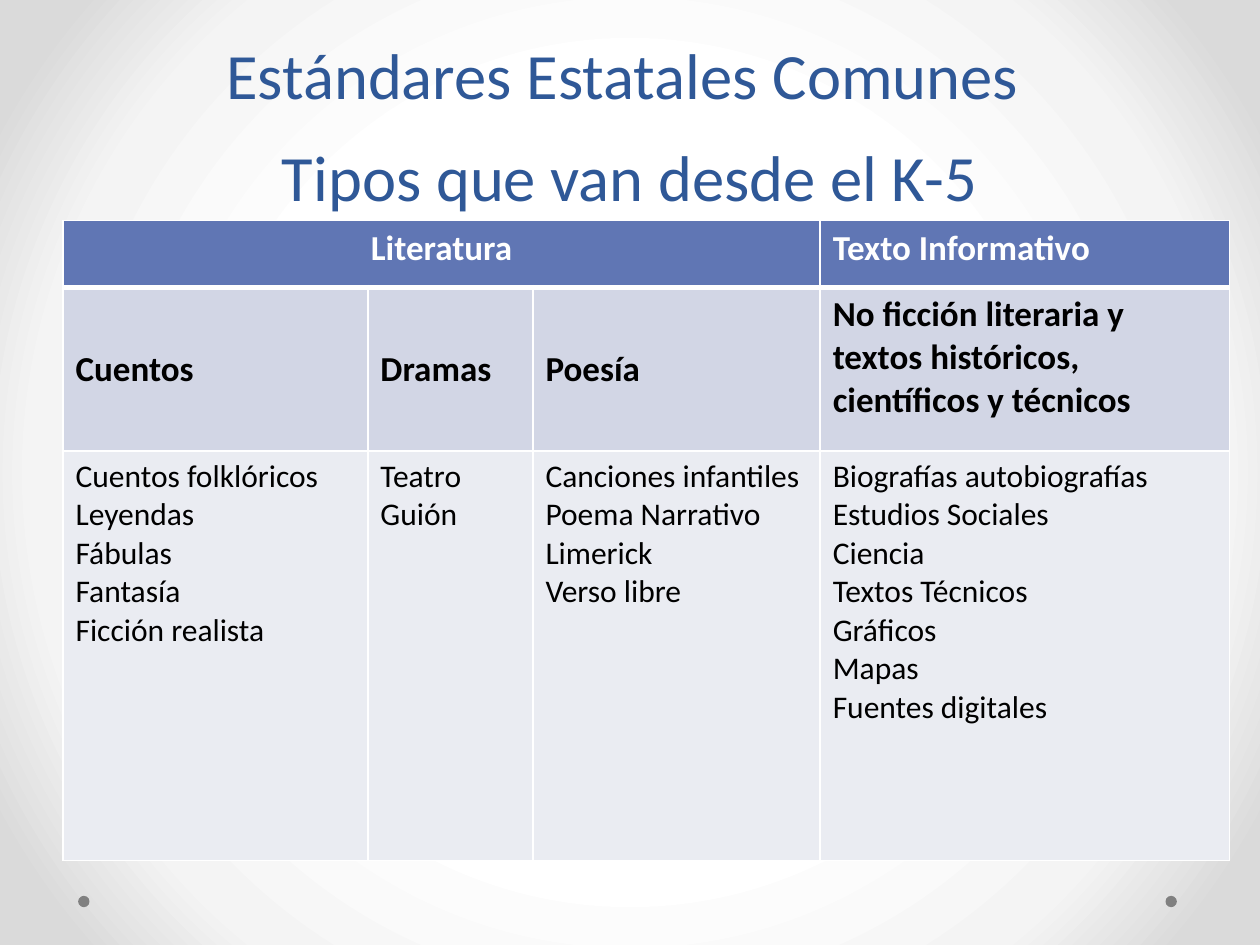
from dataclasses import dataclass

from pptx import Presentation
from pptx import util as u
from pptx.dml.color import RGBColor
from pptx.enum import shapes, text
from pptx.oxml import parse_xml
from pptx.oxml.ns import nsdecls, qn


@dataclass(frozen=True)
class Theme:
    font: str = "Calibri"
    title: str = "2F5897"
    white: str = "FFFFFF"
    black: str = "000000"
    dot: str = "808080"
    row_fills: tuple = ("6076B4", "D2D6E5", "EAECF2")
    backdrop: tuple = ((50, "FFFFFF"), (76, "F4F4F4"), (92, "DADADA"))
    title_size: float = 36.9
    heading_size: int = 20
    body_size: int = 18


theme = Theme()


def style_font(font, size, color, bold=False):
    font.name = theme.font
    font.size = u.Pt(size)
    font.bold = bold
    font.color.rgb = RGBColor.from_string(color)


def set_borders(cell, widths):
    properties = cell._tc.get_or_add_tcPr()
    for index, (side, width) in enumerate(zip("LRTB", widths)):
        properties.insert(index, parse_xml(
            f'<a:ln{side} {nsdecls("a")} w="{u.Pt(width)}"><a:solidFill>'
            f'<a:srgbClr val="{theme.white}"/></a:solidFill></a:ln{side}>'))


deck = Presentation()
deck.slide_width, deck.slide_height = u.Inches(10), u.Inches(7.5)
page = deck.slides.add_slide(deck.slide_layouts[6])

page.background.fill.gradient()
gradient = page.element.find(".//" + qn("a:gradFill"))
stops = "".join(f'<a:gs pos="{place * 1000}"><a:srgbClr val="{color}"/></a:gs>'
                for place, color in theme.backdrop)
gradient.getparent().replace(gradient, parse_xml(
    f'<a:gradFill {nsdecls("a")} rotWithShape="1"><a:gsLst>{stops}</a:gsLst>'
    '<a:path path="circle"><a:fillToRect l="50000" t="50000" r="50000" b="50000"/>'
    '</a:path></a:gradFill>'))

for left in (9.25, 0.62):
    dot = page.shapes.add_shape(shapes.MSO_SHAPE.OVAL, u.Inches(left), u.Inches(7.11),
                                u.Inches(0.09), u.Inches(0.09))
    dot.shadow.inherit = False
    dot.fill.solid()
    dot.fill.fore_color.rgb = RGBColor.from_string(theme.dot)
    dot.line.fill.background()

title_box = page.shapes.add_textbox(u.Inches(0.5), u.Inches(0.25), u.Inches(9), u.Inches(1.5))
title_box.text_frame.word_wrap = True
title_box.text_frame.vertical_anchor = text.MSO_ANCHOR.BOTTOM
title = title_box.text_frame.paragraphs[0]
title.text = "Estándares Estatales Comunes \vTipos que van desde el K-5"
title.alignment = text.PP_ALIGN.CENTER
title.line_spacing = u.Pt(58)
style_font(title.font, theme.title_size, theme.title)

column_widths = (2.42, 1.31, 2.28, 3.25)
row_heights = (0.53, 1.3, 3.25)
rows = (
    ("Literatura", "", "", "Texto Informativo"),
    ("Cuentos", "Dramas", "Poesía",
     "No ficción literaria y textos históricos, científicos y técnicos"),
    ("Cuentos folklóricos\nLeyendas\nFábulas\nFantasía\nFicción realista",
     "Teatro\nGuión",
     "Canciones infantiles\nPoema Narrativo\nLimerick\nVerso libre",
     "Biografías autobiografías\nEstudios Sociales\nCiencia\nTextos Técnicos\n"
     "Gráficos\nMapas\nFuentes digitales"),
)
row_styles = (
    (theme.heading_size, theme.white, True),
    (theme.heading_size, theme.black, True),
    (theme.body_size, theme.black, False),
)
row_borders = ((1, 1, 1, 3), (1, 1, 3, 1), (1, 1, 1, 1))

table = page.shapes.add_table(3, 4, u.Inches(0.5), u.Inches(1.75),
                              u.Inches(sum(column_widths)), u.Inches(sum(row_heights))).table
table.horz_banding = False
for column, width in zip(table.columns, column_widths):
    column.width = u.Inches(width)
for row, height in zip(table.rows, row_heights):
    row.height = u.Inches(height)
table.cell(0, 0).merge(table.cell(0, 2))

for row_index, row in enumerate(rows):
    for column_index, words in enumerate(row):
        cell = table.cell(row_index, column_index)
        cell.fill.solid()
        cell.fill.fore_color.rgb = RGBColor.from_string(theme.row_fills[row_index])
        set_borders(cell, row_borders[row_index])
        if cell.is_spanned:
            continue
        cell.text = words
        for para in cell.text_frame.paragraphs:
            style_font(para.font, *row_styles[row_index])

table.cell(0, 0).text_frame.paragraphs[0].alignment = text.PP_ALIGN.CENTER
for column_index in range(3):
    table.cell(1, column_index).vertical_anchor = text.MSO_ANCHOR.MIDDLE

deck.save("out.pptx")
